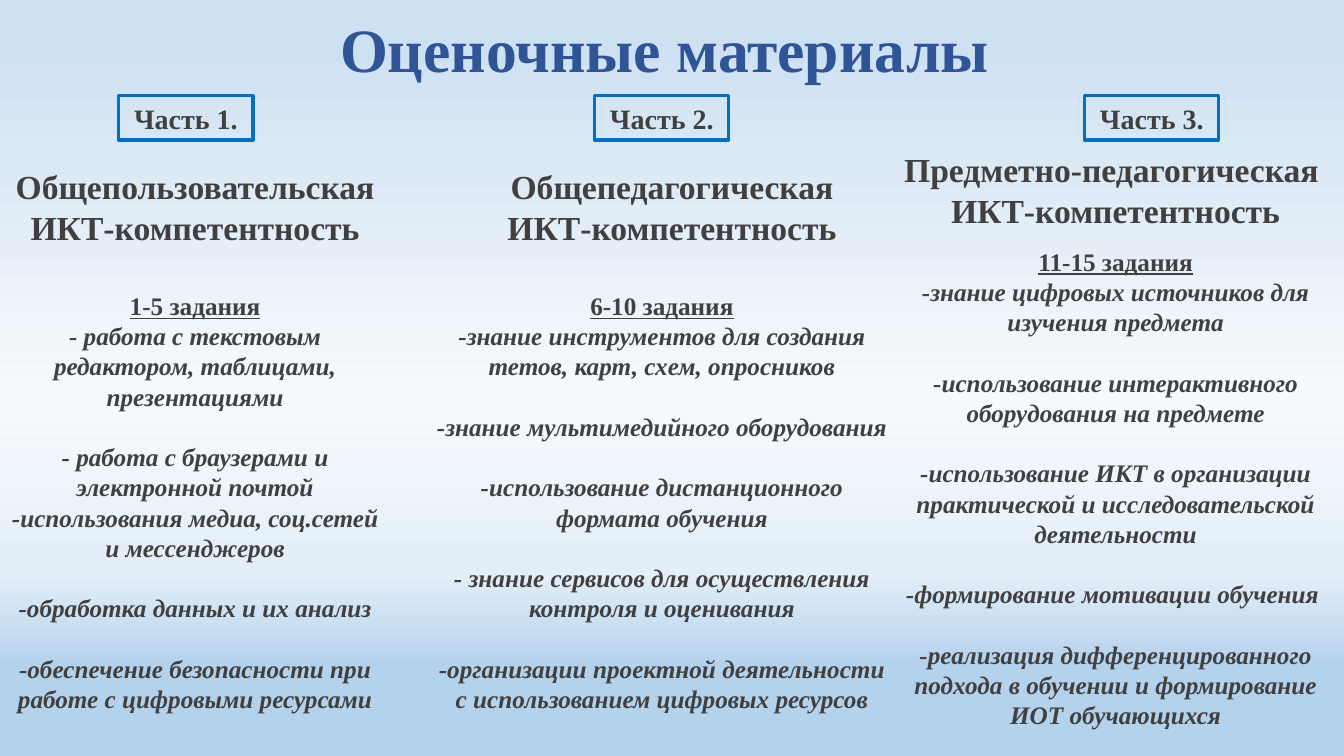
from copy import deepcopy
from dataclasses import dataclass

from pptx import Presentation
from pptx.dml.color import RGBColor
from pptx.enum.shapes import MSO_SHAPE as Shape
from pptx.enum.text import MSO_ANCHOR as Anchor, MSO_AUTO_SIZE as AutoSize, PP_ALIGN as Align
from pptx.oxml.ns import qn
from pptx.slide import Slide
from pptx.text.text import TextFrame
from pptx.util import Inches, Pt

FONT = "Times New Roman"
INK = "404040"
TITLE_BLUE = "2F5597"
FRAME_BLUE = "0070C0"
SKY = [(0.06, "CEE1F2"), (0.53, "F7FAFD"), (0.76, "E3EEF8"), (0.88, "B5D2EC")]
TASK_GAP = 21.6


@dataclass
class Box:
    left: float
    top: float
    width: float
    height: float

    def emu(self) -> list[int]:
        return [Inches(n) for n in (self.left, self.top, self.width, self.height)]


@dataclass
class Task:
    text: str
    gap: float = TASK_GAP


@dataclass
class Part:
    label: str
    label_left: float
    competence: list[str]
    competence_box: Box
    numbers: str
    tasks: list[Task]
    tasks_box: Box


PARTS = [
    Part("Часть 1.", 1.18, ["Общепользовательская ИКТ-компетентность"], Box(0, 1.6, 3.87, 0.91),
         "1-5 задания", [
             Task("- работа с текстовым редактором, таблицами, презентациями", 0),
             Task("- работа с браузерами и электронной почтой"),
             Task("-использования медиа, соц.сетей и мессенджеров", 0),
             Task("-обработка данных и их анализ"),
             Task("-обеспечение безопасности при работе с цифровыми ресурсами"),
         ], Box(0, 2.83, 3.87, 4.34)),
    Part("Часть 2.", 5.9, ["Общепедагогическая ИКТ-компетентность"], Box(4.68, 1.6, 3.97, 0.91),
         "6-10 задания", [
             Task("-знание инструментов для создания тетов, карт, схем, опросников", 0),
             Task("-знание мультимедийного оборудования"),
             Task("-использование дистанционного формата обучения"),
             Task("- знание сервисов для осуществления контроля и оценивания"),
             Task("-организации проектной деятельности с использованием цифровых ресурсов"),
         ], Box(4.21, 2.83, 4.71, 4.64)),
    Part("Часть 3.", 10.76, ["Предметно-педагогическая ", "ИКТ-компетентность"],
         Box(8.8, 1.43, 4.53, 0.91),
         "11-15 задания", [
             Task("-знание цифровых источников для изучения предмета", 0),
             Task("-использование интерактивного оборудования на предмете"),
             Task("-использование ИКТ в организации практической и исследовательской деятельности"),
             Task("-формирование мотивации обучения "),
             Task("-реализация дифференцированного подхода в обучении и формирование ИОТ обучающихся"),
         ], Box(8.8, 2.39, 4.53, 4.95)),
]


def rgb(value: str) -> RGBColor:
    return RGBColor.from_string(value)


def write(frame: TextFrame, text: str, *, size: float, color: str = INK, italic: bool = False,
          underline: bool = False, gap: float = 0, spacing: float = 1.0) -> None:
    paragraph = frame.add_paragraph() if frame.text else frame.paragraphs[0]
    paragraph.alignment = Align.CENTER
    paragraph.space_before = Pt(gap)
    paragraph.line_spacing = spacing
    run = paragraph.add_run()
    run.text = text
    run.font.name = FONT
    run.font.size = Pt(size)
    run.font.bold = True
    run.font.italic = italic
    run.font.underline = underline
    run.font.color.rgb = rgb(color)


def paint_sky(slide: Slide) -> None:
    fill = slide.background.fill
    fill.gradient()
    fill.gradient_angle = 270
    stops = slide.element.find(".//" + qn("a:gsLst"))
    for _ in range(len(SKY) - len(stops)):
        stops.append(deepcopy(stops[0]))
    for stop, (position, color) in zip(fill.gradient_stops, SKY):
        stop.position = position
        stop.color.rgb = rgb(color)


def add_title(slide: Slide, text: str) -> None:
    title = slide.shapes.title
    title.left, title.top, title.width, title.height = Box(0.52, 0.09, 12.3, 0.86).emu()
    title.text_frame.vertical_anchor = Anchor.MIDDLE
    write(title.text_frame, text, size=44, color=TITLE_BLUE, spacing=0.9)


def add_label(slide: Slide, part: Part) -> None:
    label = slide.shapes.add_shape(Shape.RECTANGLE, *Box(part.label_left, 0.95, 1.33, 0.44).emu())
    label.shadow.inherit = False
    label.fill.background()
    label.line.color.rgb = rgb(FRAME_BLUE)
    label.line.width = Pt(2.25)
    write(label.text_frame, part.label, size=20)


def add_text_area(slide: Slide, box: Box) -> TextFrame:
    frame = slide.shapes.add_textbox(*box.emu()).text_frame
    frame.word_wrap = True
    frame.auto_size = AutoSize.SHAPE_TO_FIT_TEXT
    return frame


def add_part(slide: Slide, part: Part) -> None:
    add_label(slide, part)
    competence = add_text_area(slide, part.competence_box)
    for line in part.competence:
        write(competence, line, size=24)
    tasks = add_text_area(slide, part.tasks_box)
    write(tasks, part.numbers, size=18, underline=True)
    for task in part.tasks:
        write(tasks, task.text, size=18, italic=True, gap=task.gap)


def main() -> None:
    deck = Presentation()
    deck.slide_width, deck.slide_height = Inches(13.33), Inches(7.5)
    slide = deck.slides.add_slide(deck.slide_layouts[5])
    paint_sky(slide)
    add_title(slide, "Оценочные материалы ")
    for part in PARTS:
        add_part(slide, part)
    deck.save("out.pptx")


if __name__ == "__main__":
    main()
